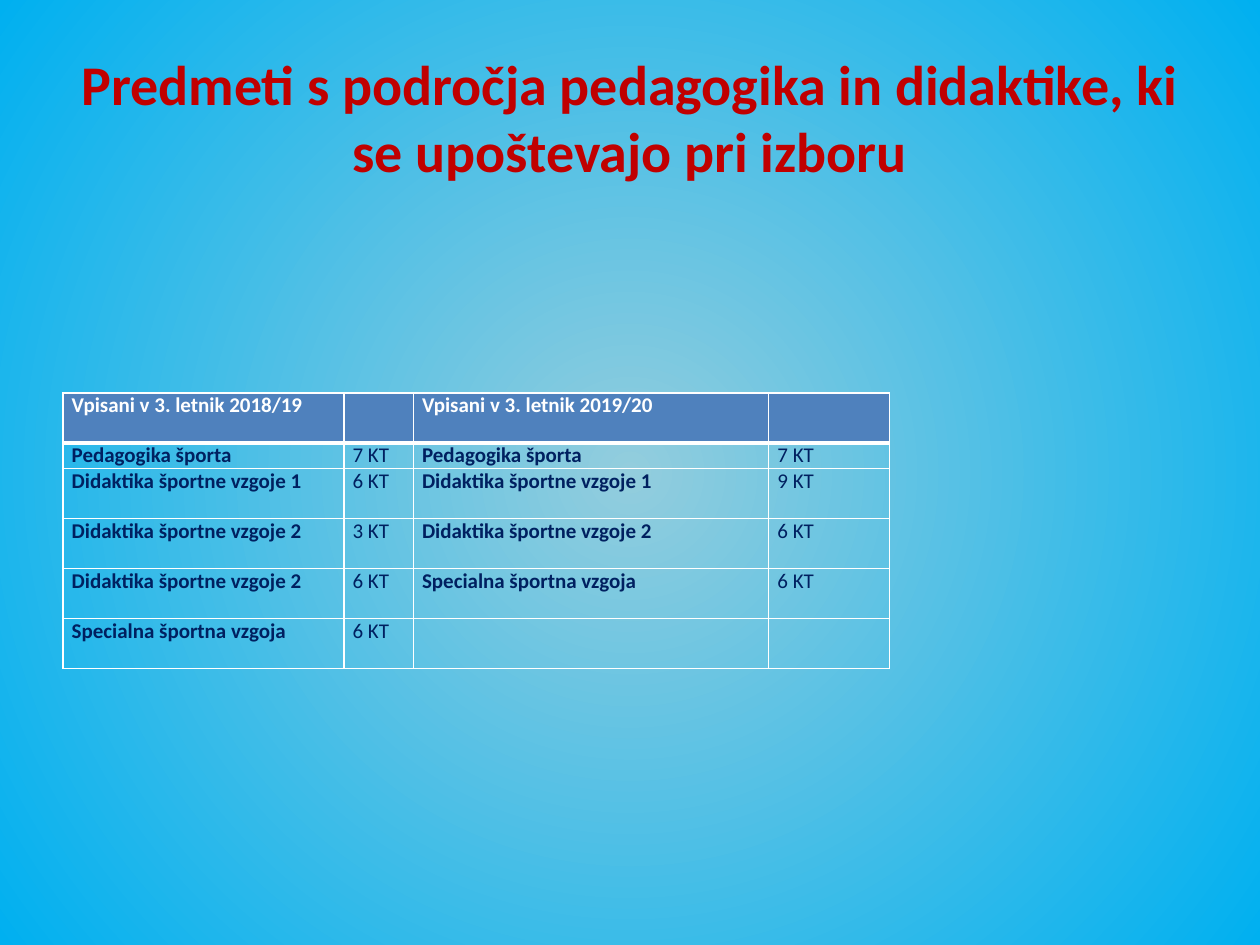
from dataclasses import dataclass

from lxml import etree
from pptx import Presentation
from pptx.dml.color import RGBColor
from pptx.enum.text import MSO_ANCHOR, PP_ALIGN
from pptx.oxml.ns import qn
from pptx.util import Pt

MIDDLE, CENTER = MSO_ANCHOR.MIDDLE, PP_ALIGN.CENTER


@dataclass(frozen=True)
class Theme:
    font: str = "Calibri"
    title_size: int = 32
    table_size: int = 12
    title: str = "C00000"
    header: str = "4F81BD"
    header_text: str = "FFFFFF"
    text: str = "002060"
    border: str = "FFFFFF"
    center: str = "93CDDD"
    edge: str = "00B0F0"


THEME = Theme()


def add_run(paragraph, text, size, color, bold):
    run = paragraph.add_run()
    run.text = text
    run.font.name = THEME.font
    run.font.size = Pt(size)
    run.font.bold = bold
    run.font.color.rgb = RGBColor.from_string(color)


def add_border(cell, side, width):
    """Draw one side (L, R, T or B) of a cell; call before setting its fill."""
    line = etree.SubElement(cell._tc.get_or_add_tcPr(), qn(f"a:ln{side}"), w=str(Pt(width)))
    solid = etree.SubElement(line, qn("a:solidFill"))
    etree.SubElement(solid, qn("a:srgbClr"), val=THEME.border)


presentation = Presentation()
presentation.slide_width, presentation.slide_height = Pt(720), Pt(540)
slide = presentation.slides.add_slide(presentation.slide_layouts[6])

# Radial background, light in the middle
background = slide.background.fill
background.gradient()
for stop, color in zip(background.gradient_stops, (THEME.center, THEME.edge)):
    stop.color.rgb = RGBColor.from_string(color)
linear = slide._element.find(".//" + qn("a:lin"))
radial = etree.Element(qn("a:path"))
radial.set("path", "circle")
etree.SubElement(radial, qn("a:fillToRect"), l="50000", t="50000", r="50000", b="50000")
linear.getparent().replace(linear, radial)

# Title
title = slide.shapes.add_textbox(Pt(36), Pt(21.6), Pt(648), Pt(90)).text_frame
title.word_wrap = True
title.vertical_anchor = MIDDLE
title.paragraphs[0].alignment = CENTER
add_run(title.paragraphs[0],
        "Predmeti s področja pedagogika in didaktike, ki se upoštevajo pri izboru",
        THEME.title_size, THEME.title, True)

# Subjects and their credits for two enrolment years
SUBJECTS = [
    ("Vpisani v 3. letnik 2018/19", "", "Vpisani v 3. letnik 2019/20", ""),
    ("Pedagogika športa", "7 KT", "Pedagogika športa", "7 KT"),
    ("Didaktika športne vzgoje 1", "6 KT", "Didaktika športne vzgoje 1", "9 KT"),
    ("Didaktika športne vzgoje 2", "3 KT", "Didaktika športne vzgoje 2", "6 KT"),
    ("Didaktika športne vzgoje 2", "6 KT", "Specialna športna vzgoja", "6 KT"),
    ("Specialna športna vzgoja", "6 KT", "", ""),
]
COLUMN_WIDTHS = (160.5, 39.7, 203.1, 69)
ROW_HEIGHTS = (28.6, 14.6, 28.6, 28.6, 28.6, 28.6)

subjects = slide.shapes.add_table(
    len(ROW_HEIGHTS), len(COLUMN_WIDTHS), Pt(36), Pt(224.6),
    Pt(sum(COLUMN_WIDTHS)), Pt(sum(ROW_HEIGHTS))).table
subjects.horz_banding = False
for column, width in zip(subjects.columns, COLUMN_WIDTHS):
    column.width = Pt(width)
for row, height in zip(subjects.rows, ROW_HEIGHTS):
    row.height = Pt(height)

for r, entries in enumerate(SUBJECTS):
    is_header = r == 0
    for c, entry in enumerate(entries):
        cell = subjects.cell(r, c)
        cell.margin_left = cell.margin_right = Pt(5)
        cell.margin_top = cell.margin_bottom = Pt(0)
        for side in "LRTB":
            at_header_rule = (r, side) in ((0, "B"), (1, "T"))
            add_border(cell, side, 3 if at_header_rule else 1)
        if is_header:
            cell.fill.solid()
            cell.fill.fore_color.rgb = RGBColor.from_string(THEME.header)
        else:
            cell.fill.background()
        if entry:
            is_subject = c % 2 == 0
            add_run(cell.text_frame.paragraphs[0], entry, THEME.table_size,
                    THEME.header_text if is_header else THEME.text, is_subject)

presentation.save("out.pptx")
